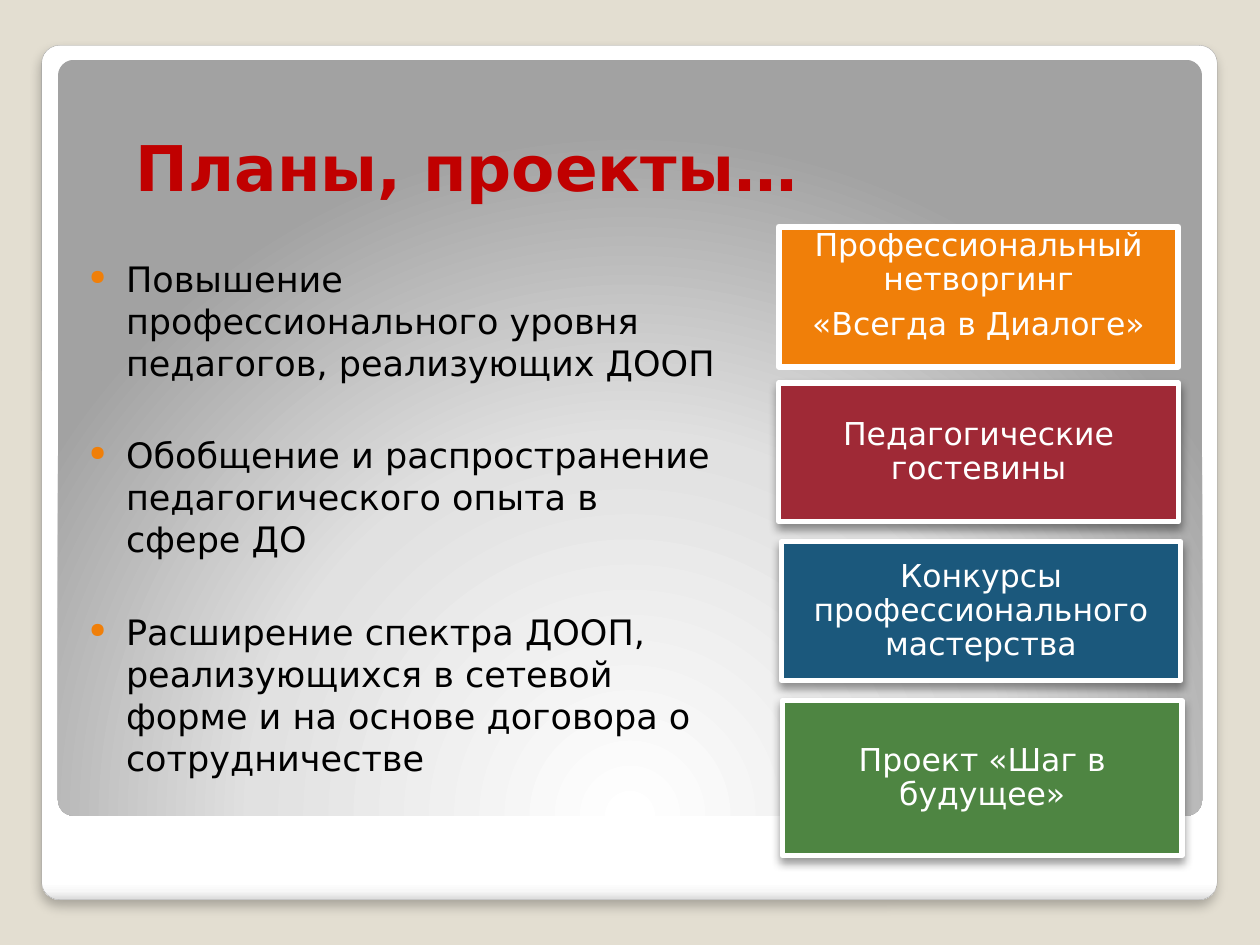
from dataclasses import dataclass

from lxml import etree
from pptx import Presentation
from pptx.dml.color import RGBColor
from pptx.enum.shapes import MSO_SHAPE as Preset
from pptx.enum.text import MSO_ANCHOR as Anchor, PP_ALIGN as Align
from pptx.oxml import parse_xml
from pptx.oxml.ns import nsdecls, qn
from pptx.util import Pt

FONT = "DejaVu Sans"
ACCENT = "F07F09"
WHITE = "FFFFFF"


@dataclass(frozen=True)
class Area:
    left: float
    top: float
    width: float
    height: float

    def lengths(self):
        return [Pt(v) for v in (self.left, self.top, self.width, self.height)]


@dataclass(frozen=True)
class Shadow:
    opacity: int
    blur: float
    distance: float


@dataclass(frozen=True)
class Card:
    area: Area
    color: str
    lines: tuple[str, ...]
    line_width: float = 3
    shadow: Shadow | None = Shadow(40, 5.2, 3)
    anchor: Anchor = Anchor.MIDDLE
    top_inset: float = 7.2


PANEL_STOPS = ((0, WHITE), (98, WHITE), (99, "F7F7F7"), (100, "DADADA"))
GLOW_STOPS = ((0, WHITE), (55, "E1E1E1"), (100, "A2A2A2"))
DOWNWARD = '<a:lin ang="5400000" scaled="0"/>'
FROM_BELOW = ('<a:path path="circle"><a:fillToRect l="50000" t="175000" '
              'r="50000" b="-75000"/></a:path>')

GOALS = (
    "Повышение профессионального уровня педагогов, реализующих ДООП",
    "Обобщение и распространение педагогического опыта в сфере ДО",
    "Расширение спектра ДООП, реализующихся в сетевой форме и на основе "
    "договора о сотрудничестве",
)

CARDS = (
    Card(Area(445, 129.6, 228.4, 79.9), ACCENT,
         ("Профессиональный нетворгинг", "«Всегда в Диалоге»"),
         line_width=3.35, shadow=None, anchor=Anchor.TOP, top_inset=1.4),
    Card(Area(447.1, 400.3, 228.4, 88.6), "4E8542", ("Проект «Шаг в будущее»",)),
    Card(Area(445, 218.9, 228.4, 79.2), "9F2936", ("Педагогические гостевины",)),
    Card(Area(446.4, 309.6, 228.4, 79.2), "1B587C",
         ("Конкурсы профессионального мастерства",)),
)


def rgb(color: str) -> RGBColor:
    return RGBColor.from_string(color)


def apply(target, values: dict) -> None:
    """Set each named attribute of the target."""
    for name, value in values.items():
        setattr(target, name, value)


def set_gradient(shape, stops, direction: str) -> None:
    shape.fill.background()
    marks = "".join(f'<a:gs pos="{place * 1000}"><a:srgbClr val="{color}"/></a:gs>'
                    for place, color in stops)
    gradient = parse_xml(f'<a:gradFill {nsdecls("a")} rotWithShape="1">'
                         f'<a:gsLst>{marks}</a:gsLst>{direction}</a:gradFill>')
    properties = shape._element.spPr
    properties.replace(properties.find(qn("a:noFill")), gradient)


def set_shadow(shape, shadow: Shadow | None) -> None:
    """Drop the theme shadow and cast the given one straight down."""
    shape.shadow.inherit = False
    if shadow:
        effects = shape._element.spPr.find(qn("a:effectLst"))
        effects.append(parse_xml(
            f'<a:outerShdw {nsdecls("a")} blurRad="{Pt(shadow.blur)}" '
            f'dist="{Pt(shadow.distance)}" dir="5400000" algn="tl" rotWithShape="0">'
            f'<a:srgbClr val="000000"><a:alpha val="{shadow.opacity * 1000}"/>'
            '</a:srgbClr></a:outerShdw>'))


def set_line(shape, color: str, width: float) -> None:
    shape.line.color.rgb = rgb(color)
    shape.line.width = Pt(width)


def add_panel(page, area: Area, stops, direction: str, shadow: Shadow | None = None):
    panel = page.shapes.add_shape(Preset.ROUNDED_RECTANGLE, *area.lengths())
    panel.adjustments[0] = 0.021
    set_gradient(panel, stops, direction)
    panel.line.fill.background()
    set_shadow(panel, shadow)
    return panel


def set_frame(shape, anchor: Anchor, insets) -> None:
    sides = ("margin_left", "margin_top", "margin_right", "margin_bottom")
    apply(shape.text_frame, {"word_wrap": True, "vertical_anchor": anchor,
                             **{side: Pt(v) for side, v in zip(sides, insets)}})


def write(shape, lines, size: float, color: str, bold: bool = False, **layout) -> list:
    """Fill the shape with one paragraph per line and return the paragraphs."""
    frame = shape.text_frame
    paras = []
    for index, line in enumerate(lines):
        para = frame.add_paragraph() if index else frame.paragraphs[0]
        apply(para, layout)
        span = para.add_run()
        span.text = line
        apply(span.font, {"name": FONT, "size": Pt(size), "bold": bold})
        span.font.color.rgb = rgb(color)
        paras.append(para)
    return paras


def add_bullet(para) -> None:
    properties = para._p.get_or_add_pPr()
    properties.set("marL", str(Pt(20.9)))
    properties.set("indent", str(-Pt(20.9)))
    color = etree.SubElement(properties, qn("a:buClr"))
    etree.SubElement(color, qn("a:srgbClr")).set("val", ACCENT)
    etree.SubElement(properties, qn("a:buSzPct")).set("val", "60000")
    etree.SubElement(properties, qn("a:buChar")).set("char", "●")


def add_title(page) -> None:
    box = page.shapes.add_textbox(*Area(70.6, 37.4, 604.8, 82.8).lengths())
    set_frame(box, Anchor.BOTTOM, (7.2, 3.6, 7.2, 3.6))
    write(box, ["Планы, проекты…"], 36, "C00000", bold=True)


def add_goals(page) -> None:
    box = page.shapes.add_textbox(*Area(36.7, 139.7, 380.2, 329.8).lengths())
    set_frame(box, Anchor.TOP, (14.4, 7.2, 7.2, 3.6))
    paras = write(box, GOALS, 20, "000000", space_before=Pt(29))
    paras[0].space_before = Pt(2.5)
    for para in paras:
        add_bullet(para)


def add_card(page, card: Card) -> None:
    box = page.shapes.add_shape(Preset.RECTANGLE, *card.area.lengths())
    box.fill.solid()
    box.fill.fore_color.rgb = rgb(card.color)
    set_line(box, WHITE, card.line_width)
    set_shadow(box, card.shadow)
    set_frame(box, card.anchor, (7.2, card.top_inset, 7.2, 7.2))
    write(box, card.lines, 18, WHITE, alignment=Align.CENTER,
          line_spacing=0.9, space_after=Pt(6.3))


def main() -> None:
    deck = Presentation()
    apply(deck, {"slide_width": Pt(720), "slide_height": Pt(540)})
    page = deck.slides.add_slide(deck.slide_layouts[6])
    page.background.fill.solid()
    page.background.fill.fore_color.rgb = rgb("E3DED1")

    panel = add_panel(page, Area(23.8, 25.9, 671.8, 488.2), PANEL_STOPS, DOWNWARD,
                      Shadow(25, 6, 4))
    set_line(panel, "A4A4A4", 0.16)
    add_panel(page, Area(33.1, 34.2, 653.8, 432), GLOW_STOPS, FROM_BELOW)
    add_title(page)
    add_goals(page)
    for card in CARDS:
        add_card(page, card)
    deck.save("out.pptx")


if __name__ == "__main__":
    main()
